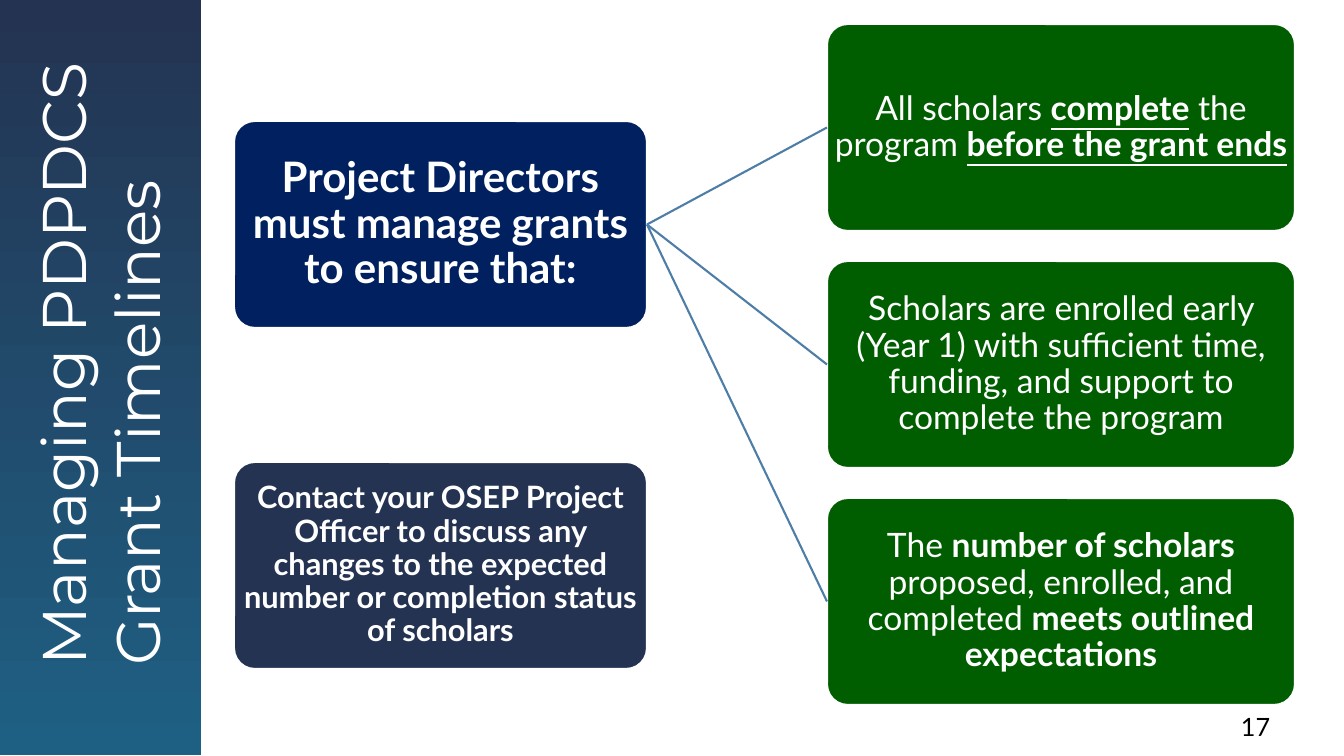
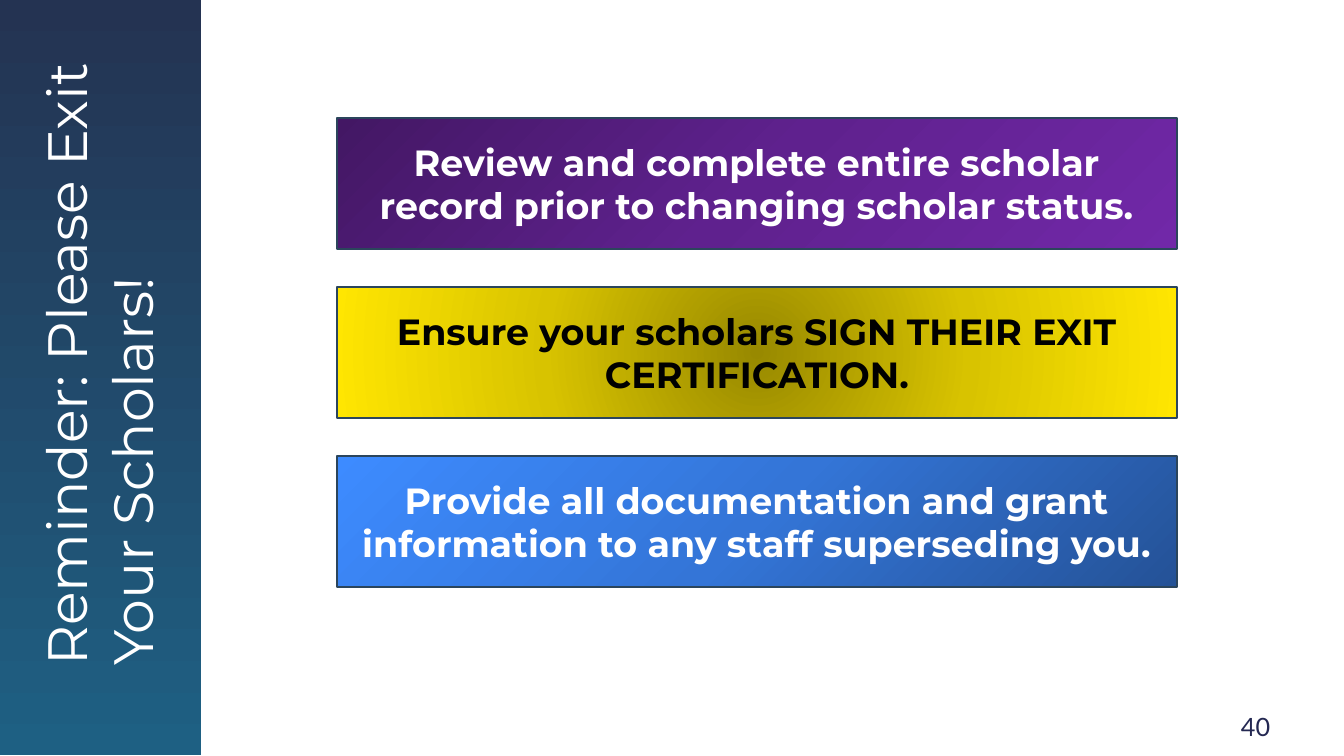
from pptx import Presentation
from pptx import util as u
from pptx.dml.color import RGBColor
from pptx.enum import shapes, text
from pptx.oxml import parse_xml
from pptx.oxml.ns import nsdecls, qn

COLORS = {
    "white": "FFFFFF", "black": "000000", "indigo": "242852",
    "navy": "002060", "slate": "243352", "green": "005E00",
    "link": "4E7EA7", "edge": "2B455C",
}
GRADIENTS = {  # stops, then the angle in degrees, or None for a circle
    "band": (["1E6083", "243352"], 0),
    "purple": (["431764", "5F218E", "7128A8"], 45),
    "yellow": (["988900", "D8C300", "FFE601"], None),
    "blue": (["245297", "3475D7", "3D8BFF"], 225),
}

SLIDE = (1344, 756)
BAND = (-279, 275, 756, 205)
TITLE = (-229, 276, 655, 145)
NUMBER = (1231, 706, 79, 27)

# Each run is its text and its style letters: b bold, u underlined.
TIMELINES = {
    "title": ("Managing PDPDCS Grant Timelines", 44),
    "number": ("17", "black"),
    "duty": [("Project Directors must manage grants to ensure that:", "b")],
    "goals": [
        [("All scholars ", ""), ("complete", "bu"), (" the program ", ""),
         ("before the grant ends", "bu")],
        [("Scholars are enrolled early (Year 1) with sufficient time, "
          "funding, and support to complete the program", "")],
        [("The ", ""), ("number of scholars ", "b"),
         ("proposed, enrolled, and completed ", ""),
         ("meets outlined expectations", "b")],
    ],
    "contact": [("Contact your OSEP Project Officer to discuss any changes to "
                 "the expected number or completion status of scholars", "b")],
}
EXIT = {
    "title": ("Reminder: Please Exit Your Scholars!", 39.6),
    "number": ("40", "indigo"),
    "reminders": [
        ("Review and complete entire scholar record prior to changing "
         "scholar status.", "purple", "white"),
        ("Ensure your scholars SIGN THEIR EXIT CERTIFICATION.",
         "yellow", "black"),
        ("Provide all documentation and grant information to any staff "
         "superseding you.", "blue", "white"),
    ],
}


def px(length):
    return u.Emu(round(length * 914400 / 100.8))


def place(box):
    return [px(length) for length in box]


def rgb(name):
    return RGBColor.from_string(COLORS[name])


def set_attrs(target, **values):
    for name, value in values.items():
        setattr(target, name, value)


def write(frame, runs, size, color, font, align=text.PP_ALIGN.LEFT,
          spacing=1.0, anchor=text.MSO_ANCHOR.MIDDLE):
    set_attrs(frame, word_wrap=True, auto_size=text.MSO_AUTO_SIZE.NONE,
              vertical_anchor=anchor)
    paragraph = frame.paragraphs[0]
    set_attrs(paragraph, alignment=align, line_spacing=spacing)
    for words, style in runs:
        run = paragraph.add_run()
        run.text = words
        set_attrs(run.font, name=font, size=u.Pt(size),
                  bold="b" in style, underline="u" in style)
        run.font.color.rgb = rgb(color)


def fill_gradient(shape, name):
    colors, angle = GRADIENTS[name]
    stops = "".join(
        f'<a:gs pos="{100000 * i // (len(colors) - 1)}">'
        f'<a:srgbClr val="{color}"/></a:gs>'
        for i, color in enumerate(colors))
    if angle is None:
        course = ('<a:path path="circle"><a:fillToRect l="50000" t="50000" '
                  'r="50000" b="50000"/></a:path>')
    else:
        course = f'<a:lin ang="{angle * 60000}" scaled="0"/>'
    shape.fill.gradient()
    properties = shape.element.spPr
    properties.replace(properties.find(qn("a:gradFill")), parse_xml(
        f'<a:gradFill {nsdecls("a")} rotWithShape="1">'
        f'<a:gsLst>{stops}</a:gsLst>{course}</a:gradFill>'))


def add_box(slide, kind, box, fill, line=None):
    shape = slide.shapes.add_shape(kind, *place(box))
    shape.shadow.inherit = False
    if fill in GRADIENTS:
        fill_gradient(shape, fill)
    else:
        shape.fill.solid()
        shape.fill.fore_color.rgb = rgb(fill)
    if line:
        shape.line.color.rgb = rgb(line)
        shape.line.width = u.Pt(1.5)
    else:
        shape.line.fill.background()
    return shape


def add_card(slide, box, fill, runs, size):
    card = add_box(slide, shapes.MSO_SHAPE.ROUNDED_RECTANGLE, box, fill, "white")
    card.adjustments[0] = 0.1
    set_attrs(card.text_frame, margin_left=0, margin_right=0,
              margin_top=0, margin_bottom=0)
    write(card.text_frame, runs, size, "white", "Lato",
          text.PP_ALIGN.CENTER, 0.9)
    return card


def link(slide, start, end):
    """Join the right side of start to the left side of end."""
    line = slide.shapes.add_connector(shapes.MSO_CONNECTOR.STRAIGHT, 0, 0, 0, 0)
    line.begin_connect(start, 3)
    line.end_connect(end, 1)
    line.line.color.rgb = rgb("link")
    line.line.width = u.Pt(1.5)
    line.element.spPr.append(parse_xml(f'<a:effectLst {nsdecls("a")}/>'))


def add_slide(prs, content):
    slide = prs.slides.add_slide(prs.slide_layouts[5])
    words, size = content["title"]
    title = slide.shapes.title
    for name, value in zip(("left", "top", "width", "height"), place(TITLE)):
        setattr(title, name, value)
    title.rotation = 270
    write(title.text_frame, [(words, "")], size, "white", "Montserrat")
    digits, color = content["number"]
    number = slide.shapes.add_textbox(*place(NUMBER))
    write(number.text_frame, [(digits, "")], 18, color, "Lato",
          anchor=text.MSO_ANCHOR.TOP)
    return slide


def move_band_to_layout(slide):
    """Draw the side band once, on the layout that all slides use."""
    band = add_box(slide, shapes.MSO_SHAPE.RECTANGLE, BAND, "band")
    band.rotation = 270
    slide.slide_layout.shapes.element.insert(2, band.element)


def build_timelines(slide):
    left, width, height = 234, 413, 207
    duty = add_card(slide, (left, 121, width, height), "navy",
                    TIMELINES["duty"], 30)
    for i, runs in enumerate(TIMELINES["goals"]):
        goal = add_card(slide, (827, 24 + 237 * i, 468, height), "green", runs, 24)
        link(slide, duty, goal)
    add_card(slide, (left, 462, width, height), "slate",
             TIMELINES["contact"], 22)


def build_exit(slide):
    for i, (words, fill, color) in enumerate(EXIT["reminders"]):
        reminder = add_box(slide, shapes.MSO_SHAPE.RECTANGLE,
                           (337, 118 + 169 * i, 840, 131), fill, "edge")
        write(reminder.text_frame, [(words, "b")], 26, color, "Montserrat",
              text.PP_ALIGN.CENTER)


def main():
    prs = Presentation()
    prs.slide_width, prs.slide_height = place(SLIDE)
    timelines = add_slide(prs, TIMELINES)
    move_band_to_layout(timelines)
    build_timelines(timelines)
    build_exit(add_slide(prs, EXIT))
    prs.save("out.pptx")


if __name__ == "__main__":
    main()
